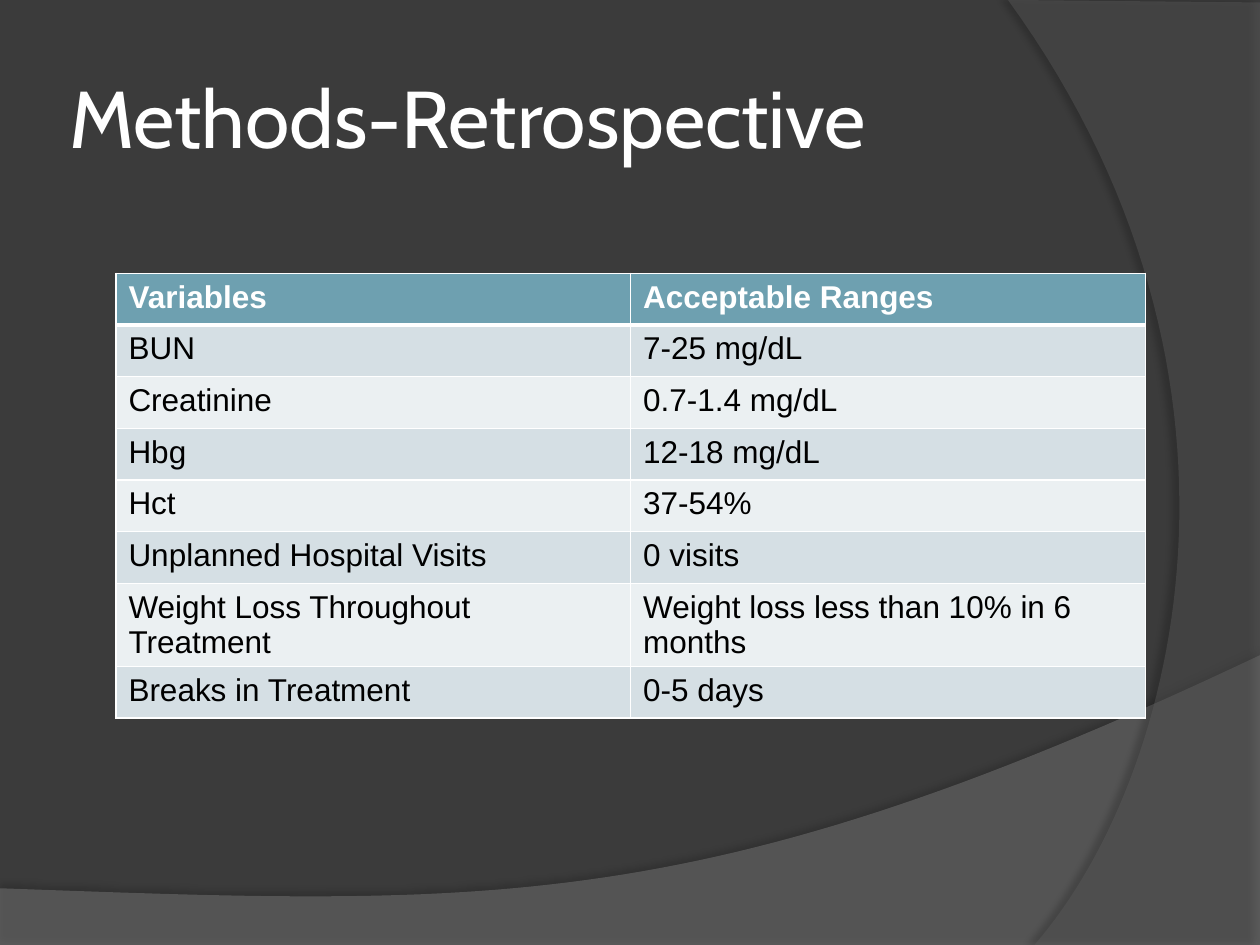
"""Build the Methods-Retrospective slide with its table of acceptable ranges."""
from dataclasses import dataclass

from pptx import Presentation
from pptx.dml.color import RGBColor
from pptx.enum.text import MSO_ANCHOR, PP_ALIGN
from pptx.oxml import parse_xml
from pptx.oxml.ns import nsdecls, qn
from pptx.util import Inches, Pt


@dataclass(frozen=True)
class Theme:
    background: str = "3B3B3B"
    lower_wave: str = "7F7F7F"
    right_wave: str = "5E5E5E"
    light: str = "FFFFFF"
    dark: str = "000000"
    header: str = "6EA0B0"
    bands: tuple = ("D5DFE4", "EBF0F2")
    title_font: str = "Cabin"
    table_font: str = "Arial"
    title_size: int = 46
    table_size: int = 18


def curve(start, first, second, end, steps=60):
    """Return points along a cubic Bezier curve."""
    return [
        tuple(
            (1 - t) ** 3 * a + 3 * (1 - t) ** 2 * t * b + 3 * (1 - t) * t**2 * c + t**3 * d
            for a, b, c, d in zip(start, first, second, end)
        )
        for t in (step / steps for step in range(steps + 1))
    ]


def style_text(para, font, size, color, bold=False):
    """Format every run of a paragraph."""
    for span in para.runs:
        span.font.name = font
        span.font.size = Pt(size)
        span.font.bold = bold
        span.font.color.rgb = RGBColor.from_string(color)


theme = Theme()
deck = Presentation()
deck.slide_width, deck.slide_height = Inches(10), Inches(7.5)
page = deck.slides.add_slide(deck.slide_layouts[5])
page.background.fill.solid()
page.background.fill.fore_color.rgb = RGBColor.from_string(theme.background)

lower_edge = curve((10, 5.2), (5.59, 7.29), (3.91, 7.19), (0, 7.05))
right_edge = curve((8.21, 7.5), (9.35, 6.19), (10.18, 3), (8, 0))
waves = [
    ([(0, 7.51), (10, 7.51)] + lower_edge, theme.lower_wave, 45, 35, 3.5, 270),
    ([(10, 0.02), (10, 7.5)] + right_edge, theme.right_wave, 40, 45, 4, 180),
]
for points, color, opacity, shadow_opacity, distance, angle in waves:
    corners = [(Inches(x), Inches(y)) for x, y in points]
    builder = page.shapes.build_freeform(*corners[0])
    builder.add_line_segments(corners[1:], close=True)
    wave = builder.convert_to_shape()
    wave.line.fill.background()
    wave.fill.solid()
    wave.fill.fore_color.rgb = RGBColor.from_string(color)
    wave.element.spPr.find(".//" + qn("a:srgbClr")).append(
        parse_xml(f'<a:alpha {nsdecls("a")} val="{opacity * 1000}"/>')
    )
    wave.shadow.inherit = False
    wave.element.spPr.find(qn("a:effectLst")).append(
        parse_xml(
            f'<a:outerShdw {nsdecls("a")} blurRad="{Pt(4)}" dist="{Pt(distance)}" '
            f'dir="{angle * 60000}" algn="ctr" rotWithShape="0">'
            f'<a:srgbClr val="{theme.dark}"><a:alpha val="{shadow_opacity * 1000}"/>'
            "</a:srgbClr></a:outerShdw>"
        )
    )

title = page.shapes.title
title.element.getparent().append(title.element)
title.left, title.top = Inches(0.5), Inches(0.3)
title.width, title.height = Inches(8.17), Inches(1.25)
frame = title.text_frame
frame.text = "Methods-Retrospective"
frame.word_wrap = True
frame.vertical_anchor = MSO_ANCHOR.MIDDLE
frame.margin_left = frame.margin_right = Inches(0.05)
frame.margin_top = frame.margin_bottom = Inches(0.05)
frame.paragraphs[0].alignment = PP_ALIGN.LEFT
style_text(frame.paragraphs[0], theme.title_font, theme.title_size, theme.light)

rows = [
    ("Variables", "Acceptable Ranges"),
    ("BUN", "7-25 mg/dL"),
    ("Creatinine", "0.7-1.4 mg/dL"),
    ("Hbg", "12-18 mg/dL"),
    ("Hct", "37-54%"),
    ("Unplanned Hospital Visits", "0 visits"),
    ("Weight Loss Throughout Treatment", "Weight loss less than 10% in 6 months"),
    ("Breaks in Treatment", "0-5 days"),
]
row_height = 0.41
table = page.shapes.add_table(
    len(rows), 2, Inches(0.92), Inches(2.17), Inches(8.17), Inches(row_height * len(rows))
).table
for row_index, texts in enumerate(rows):
    is_header = row_index == 0
    fill = theme.header if is_header else theme.bands[(row_index - 1) % 2]
    widths = {
        "lnL": 1,
        "lnR": 1,
        "lnT": 3 if row_index == 1 else 1,
        "lnB": 3 if is_header else 1,
    }
    for column_index, text in enumerate(texts):
        cell = table.cell(row_index, column_index)
        cell.text_frame.text = text
        style_text(
            cell.text_frame.paragraphs[0],
            theme.table_font,
            theme.table_size,
            theme.light if is_header else theme.dark,
            is_header,
        )
        properties = cell._tc.get_or_add_tcPr()
        for side, width in widths.items():
            properties.append(
                parse_xml(
                    f'<a:{side} {nsdecls("a")} w="{Pt(width)}"><a:solidFill>'
                    f'<a:srgbClr val="{theme.light}"/></a:solidFill></a:{side}>'
                )
            )
        cell.fill.solid()
        cell.fill.fore_color.rgb = RGBColor.from_string(fill)

deck.save("out.pptx")
